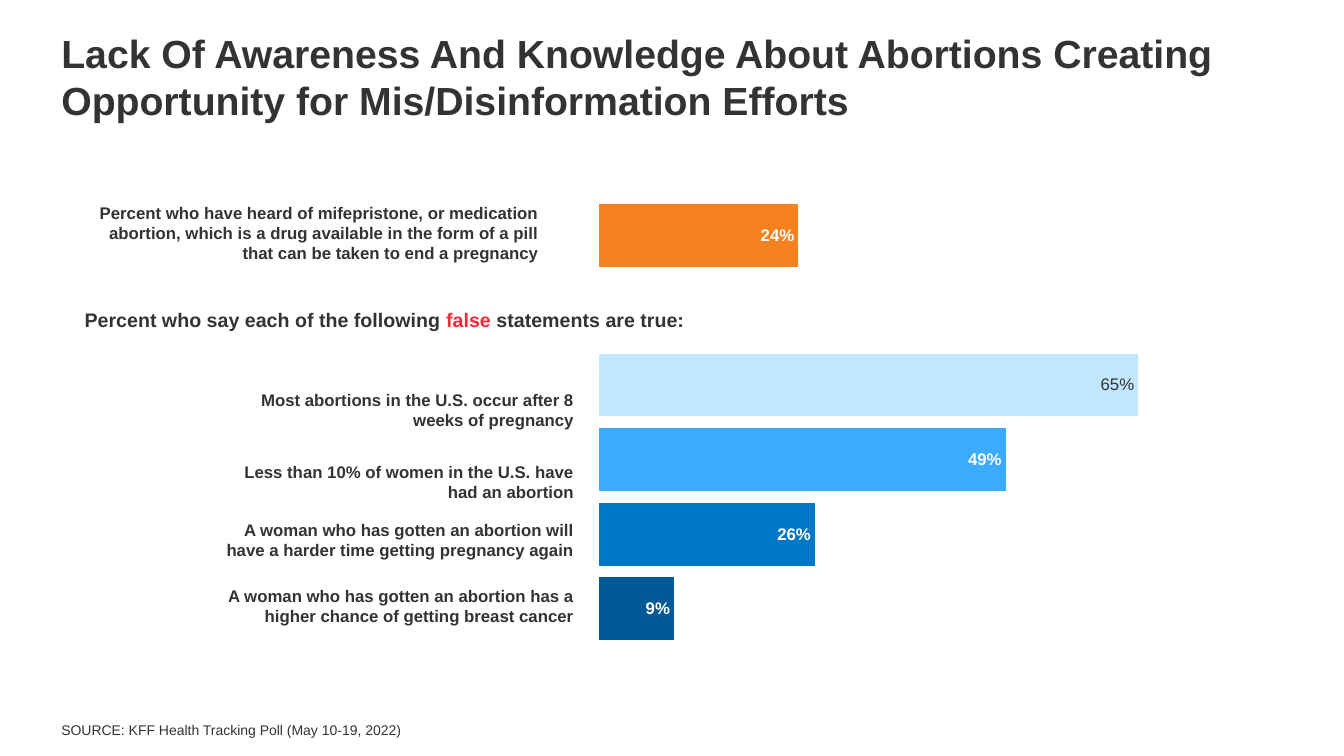
from lxml.etree import SubElement
from pptx import Presentation
from pptx.chart.data import CategoryChartData
from pptx.dml.color import RGBColor
from pptx.enum.chart import XL_CHART_TYPE, XL_LABEL_POSITION
from pptx.enum.text import MSO_AUTO_SIZE, PP_ALIGN
from pptx.oxml.ns import qn
from pptx.util import Inches, Pt

FONT = "Arial"
DARK = RGBColor(0x33, 0x33, 0x33)
RED = RGBColor(0xEE, 0x2C, 0x37)
WHITE = RGBColor(0xFF, 0xFF, 0xFF)
NAVY = RGBColor(0x00, 0x3C, 0x64)
DEEP_BLUE = RGBColor(0x00, 0x59, 0x96)
BLUE = RGBColor(0x00, 0x77, 0xC8)
SKY = RGBColor(0x3C, 0xAB, 0xFD)
PALE = RGBColor(0xC1, 0xE6, 0xFF)
ORANGE = RGBColor(0xF5, 0x82, 0x1F)

BARS = [(0.09, DEEP_BLUE), (0.26, BLUE), (0.49, SKY), (0.65, PALE), (None, None), (0.24, ORANGE)]
PALE_BAR = 3
PLOT_AREA = {"x": 0.045, "y": 0, "w": 0.911, "h": 0.987}
STATEMENTS = [
    (0, 0, "Most abortions in the U.S. occur after 8 weeks of pregnancy"),
    (0, 0.71, "Less than 10% of women in the U.S. have had an abortion"),
    (0, 1.29, "A woman who has gotten an abortion will have a harder time getting pregnancy again"),
    (0.11, 1.94, "A woman who has gotten an abortion has a higher chance of getting breast cancer"),
]


def style_font(font, size, color=DARK, bold=True):
    """Apply the slide's typeface with a size, colour and weight."""
    font.name = FONT
    font.size = Pt(size)
    font.bold = bold
    font.color.rgb = color


def add_text(page, left, top, width, height, spans, size, bold=True,
             align=PP_ALIGN.LEFT, grow=True):
    """Add a wrapped text box made of (text, colour) spans."""
    box = page.shapes.add_textbox(Inches(left), Inches(top), Inches(width), Inches(height))
    frame = box.text_frame
    frame.word_wrap = True
    frame.auto_size = MSO_AUTO_SIZE.SHAPE_TO_FIT_TEXT if grow else MSO_AUTO_SIZE.NONE
    para = frame.paragraphs[0]
    para.alignment = align
    for text, color in spans:
        span = para.add_run()
        span.text = text
        style_font(span.font, size, color, bold)


def add_heading(page, left, top, width, height):
    """Add the slide title."""
    title = ("Lack Of Awareness And Knowledge About Abortions Creating "
             "Opportunity for Mis/Disinformation Efforts")
    add_text(page, left, top, width, height, [(title, DARK)], 28, grow=False)


def add_source(page, left, top, width, height):
    """Add the source line at the foot of the slide."""
    source = "SOURCE: KFF Health Tracking Poll (May 10-19, 2022)"
    add_text(page, left, top, width, height, [(source, DARK)], 10, bold=False, grow=False)


def set_plot_area(chart):
    """Fix the inner plot area as fractions of the chart frame."""
    plot_area = chart._chartSpace.chart.plotArea
    for layout in plot_area.findall(qn("c:layout")):
        plot_area.remove(layout)
    layout = SubElement(plot_area, qn("c:layout"))
    plot_area.insert(0, layout)
    manual = SubElement(layout, qn("c:manualLayout"))
    settings = {"layoutTarget": "inner", "xMode": "edge", "yMode": "edge", **PLOT_AREA}
    for name, value in settings.items():
        SubElement(manual, qn(f"c:{name}")).set("val", str(value))


def add_poll_chart(page, left, top, width, height):
    """Add the bar chart of poll shares."""
    data = CategoryChartData(number_format="0%")
    data.categories = [str(number) for number in range(1, len(BARS) + 1)]
    data.add_series("Series 1", [share for share, color in BARS])
    chart = page.shapes.add_chart(XL_CHART_TYPE.BAR_CLUSTERED, Inches(left), Inches(top),
                                  Inches(width), Inches(height), data).chart
    chart.has_legend = False
    chart.has_title = False
    style_font(chart.font, 10, bold=False)
    set_plot_area(chart)

    chart.category_axis.visible = False
    shares = chart.value_axis
    shares.visible = False
    shares.has_major_gridlines = False
    shares.minimum_scale = 0
    shares.maximum_scale = 0.7
    shares.tick_labels.number_format = "0%"
    shares.tick_labels.number_format_is_linked = False

    plot = chart.plots[0]
    plot.gap_width = 19
    plot.vary_by_categories = False
    series = plot.series[0]
    series.invert_if_negative = False
    series.format.fill.solid()
    series.format.fill.fore_color.rgb = NAVY
    for index, (share, color) in enumerate(BARS):
        if color is not None:
            fill = series.points[index].format.fill
            fill.solid()
            fill.fore_color.rgb = color

    labels = series.data_labels
    labels.show_value = True
    labels.number_format = "0%"
    labels.number_format_is_linked = False
    labels.position = XL_LABEL_POSITION.INSIDE_END
    style_font(labels.font, 12, WHITE)
    pale_label = series.points[PALE_BAR].data_label
    style_font(pale_label.font, 12, DARK, bold=False)
    pale_label.position = XL_LABEL_POSITION.INSIDE_END


def add_awareness(page, left, top, width, height):
    """Add the label beside the awareness bar."""
    label = ("Percent who have heard of mifepristone, or medication abortion, which is a drug "
             "available in the form of a pill that can be taken to end a pregnancy")
    add_text(page, left, top, width, height, [(label, DARK)], 12, align=PP_ALIGN.RIGHT)


def add_question(page, left, top, width, height):
    """Add the lead-in above the false statements."""
    spans = [("Percent who say each of the following ", DARK), ("false", RED),
             (" statements are true:", DARK)]
    add_text(page, left, top, width, height, spans, 14)


def add_statements(page, left, top, width, height):
    """Add the false statements, each ending at the same right edge."""
    for indent, drop, statement in STATEMENTS:
        add_text(page, left + indent, top + drop, width - indent, height,
                 [(statement, DARK)], 12, align=PP_ALIGN.RIGHT)


def main():
    """Build the slide and save the deck."""
    deck = Presentation()
    deck.slide_width = Inches(13.33)
    deck.slide_height = Inches(7.5)
    page = deck.slides.add_slide(deck.slide_layouts[6])
    add_source(page, 0.51, 7.11, 11.26, 0.28)
    add_heading(page, 0.51, 0.24, 12.32, 0.94)
    add_question(page, 0.74, 3.01, 9.85, 0.7)
    add_poll_chart(page, 5.66, 1.97, 6.32, 4.5)
    add_statements(page, 2.02, 3.82, 3.77, 0.5)
    add_awareness(page, 0.67, 1.96, 4.77, 0.71)
    deck.save("out.pptx")


if __name__ == "__main__":
    main()
